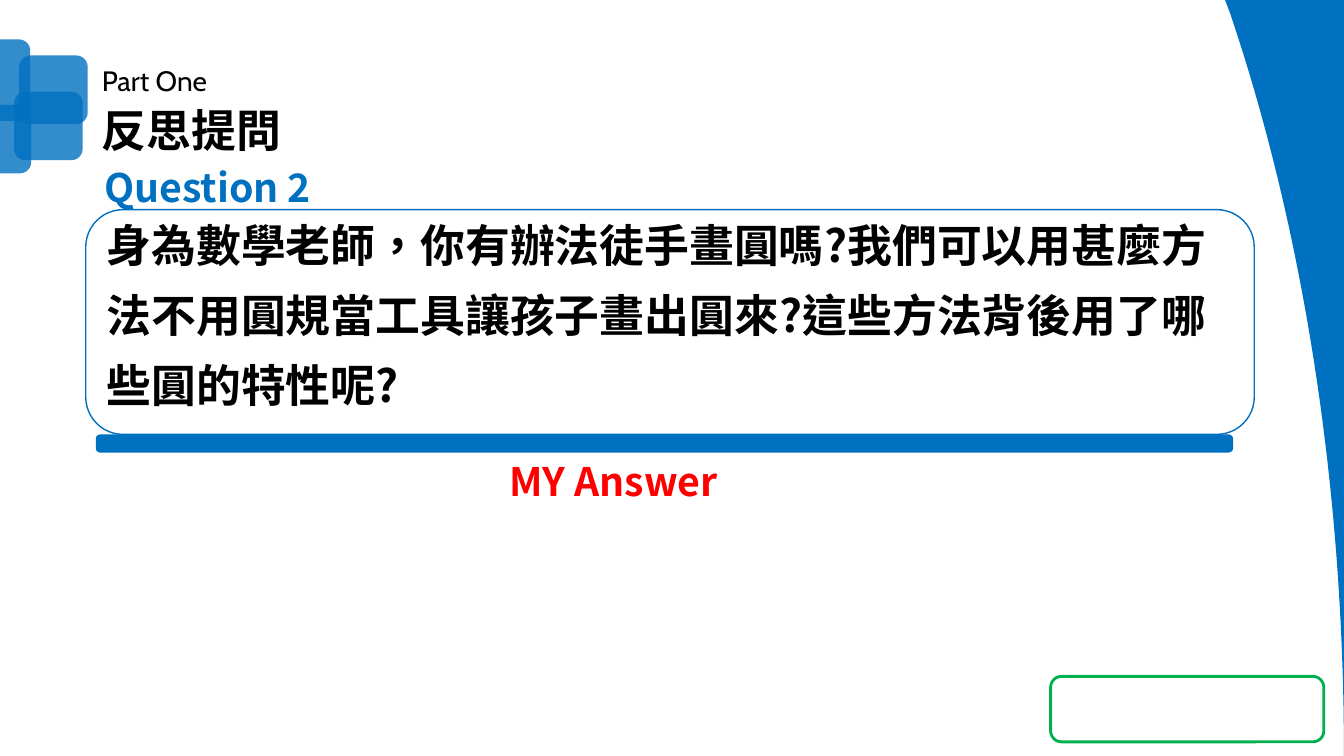
"""Build the reflection question slide of a mathematics lesson."""
from dataclasses import dataclass

from lxml import etree
from pptx import Presentation
from pptx.dml.color import RGBColor
from pptx.enum.shapes import MSO_SHAPE
from pptx.enum.text import MSO_ANCHOR, MSO_AUTO_SIZE, PP_ALIGN
from pptx.oxml.ns import qn
from pptx.util import Pt

PX = 9144
SLIDE_WIDTH, SLIDE_HEIGHT = 1333, 750
SECTION_LAYOUT = 2
ROUNDED = MSO_SHAPE.ROUNDED_RECTANGLE
TOP, MIDDLE = MSO_ANCHOR.TOP, MSO_ANCHOR.MIDDLE
LEFT, CENTER = PP_ALIGN.LEFT, PP_ALIGN.CENTER
LATIN, CJK = "Cabin", "Noto Sans CJK SC"
LANGUAGE = "zh-TW"
CURVE_STEPS = 32
COLORS = {
    "blue": "0070C0", "black": "000000", "white": "FFFFFF",
    "red": "FF0000", "green": "00B050",
}


@dataclass(frozen=True)
class Area:
    left: int
    top: int
    width: int
    height: int

    def emu(self) -> list[int]:
        return [side * PX for side in (self.left, self.top, self.width, self.height)]


@dataclass(frozen=True)
class Panel:
    area: Area
    fill: str | None = "blue"
    line: str | None = None
    line_points: float = 1
    corner: float | None = None
    opacity: int = 100


@dataclass(frozen=True)
class Piece:
    text: str
    color: str
    size: int
    font: str = CJK
    bold: bool = False


SQUARES = [
    Panel(Area(*sides), opacity=80)
    for sides in ((-38, 39, 68, 81), (19, 55, 68, 68), (14, 91, 68, 68), (-37, 104, 68, 68))
]
DIVIDER = Panel(Area(95, 431, 1128, 18), corner=0.23)
CORNER_FRAME = Panel(Area(1042, 671, 271, 65), fill=None, line="green", line_points=2)
QUESTION = Panel(Area(85, 208, 1159, 223), fill="white", line="blue")
QUESTION_TEXT = (
    "身為數學老師，你有辦法徒手畫圓嗎?我們可以用甚麼方法不用圓規當工具讓孩子畫出圓來?"
    "這些方法背後用了哪些圓的特性呢?"
)


def rgb(name: str) -> RGBColor:
    return RGBColor.from_string(COLORS[name])


def draw_panel(page, panel: Panel):
    shape = page.shapes.add_shape(ROUNDED, *panel.area.emu())
    shape.shadow.inherit = False
    if panel.corner is not None:
        shape.adjustments[0] = panel.corner
    if panel.fill:
        shape.fill.solid()
        shape.fill.fore_color.rgb = rgb(panel.fill)
    else:
        shape.fill.background()
    if panel.line:
        shape.line.color.rgb = rgb(panel.line)
        shape.line.width = Pt(panel.line_points)
    else:
        shape.line.fill.background()
    if panel.opacity < 100:
        color = shape._element.spPr.find(f"{qn('a:solidFill')}/{qn('a:srgbClr')}")
        etree.SubElement(color, qn("a:alpha"), val=str(panel.opacity * 1000))
    return shape


def write(shape, piece: Piece, align=LEFT, anchor=TOP, spacing=None,
          top: int = 5, bottom: int = 5) -> None:
    frame = shape.text_frame
    frame.text = piece.text
    frame.word_wrap = True
    frame.auto_size = MSO_AUTO_SIZE.NONE
    frame.vertical_anchor = anchor
    frame.margin_top, frame.margin_bottom = top * PX, bottom * PX
    para = frame.paragraphs[0]
    para.alignment = align
    para.space_before = Pt(0)
    if spacing is not None:
        para.line_spacing = spacing
    span = para.runs[0]
    span.font.size = Pt(piece.size)
    span.font.bold = piece.bold
    span.font.name = piece.font
    span.font.color.rgb = rgb(piece.color)
    properties = span._r.get_or_add_rPr()
    properties.set("lang", LANGUAGE)
    etree.SubElement(properties, qn("a:ea"), typeface=CJK)


def place(shape, area: Area) -> None:
    shape.left, shape.top, shape.width, shape.height = area.emu()


def draw_label(page, area: Area, piece: Piece, align) -> None:
    write(page.shapes.add_textbox(*area.emu()), piece, align)


def draw_side_curve(page) -> None:
    start, pull_start, pull_end, end = (1333, 750), (1333, 477), (1291, 223), (1220, 13)
    controls = (start, pull_start, pull_end, end)
    points = [(SLIDE_WIDTH, 0), start]
    for step in range(1, CURVE_STEPS + 1):
        t = step / CURVE_STEPS
        weights = ((1 - t) ** 3, 3 * t * (1 - t) ** 2, 3 * t * t * (1 - t), t ** 3)
        points.append(tuple(
            sum(weight * control[axis] for weight, control in zip(weights, controls))
            for axis in (0, 1)
        ))
    builder = page.shapes.build_freeform(1215 * PX, 0)
    builder.add_line_segments([(round(x * PX), round(y * PX)) for x, y in points])
    curve = builder.convert_to_shape()
    curve.shadow.inherit = False
    curve.fill.solid()
    curve.fill.fore_color.rgb = rgb("blue")
    curve.line.fill.background()


def main() -> None:
    deck = Presentation()
    deck.slide_width, deck.slide_height = SLIDE_WIDTH * PX, SLIDE_HEIGHT * PX
    page = deck.slides.add_slide(deck.slide_layouts[SECTION_LAYOUT])
    for square in SQUARES:
        draw_panel(page, square)
    draw_side_curve(page)

    title, part = page.shapes.title, page.placeholders[1]
    place(title, Area(91, 103, 325, 59))
    write(title, Piece("反思提問", "black", 32, LATIN, True), spacing=0.9)
    place(part, Area(91, 62, 325, 53))
    write(part, Piece("Part One", "black", 20, LATIN), spacing=0.9)

    draw_panel(page, DIVIDER)
    draw_panel(page, CORNER_FRAME)
    draw_label(page, Area(94, 157, 237, 91), Piece("Question 2", "blue", 28, bold=True), LEFT)
    write(draw_panel(page, QUESTION), Piece(QUESTION_TEXT, "black", 32, bold=True),
          anchor=MIDDLE, spacing=Pt(50), top=0, bottom=31)
    draw_label(page, Area(490, 449, 237, 57), Piece("MY Answer", "red", 28, bold=True), CENTER)
    deck.save("out.pptx")


if __name__ == "__main__":
    main()
